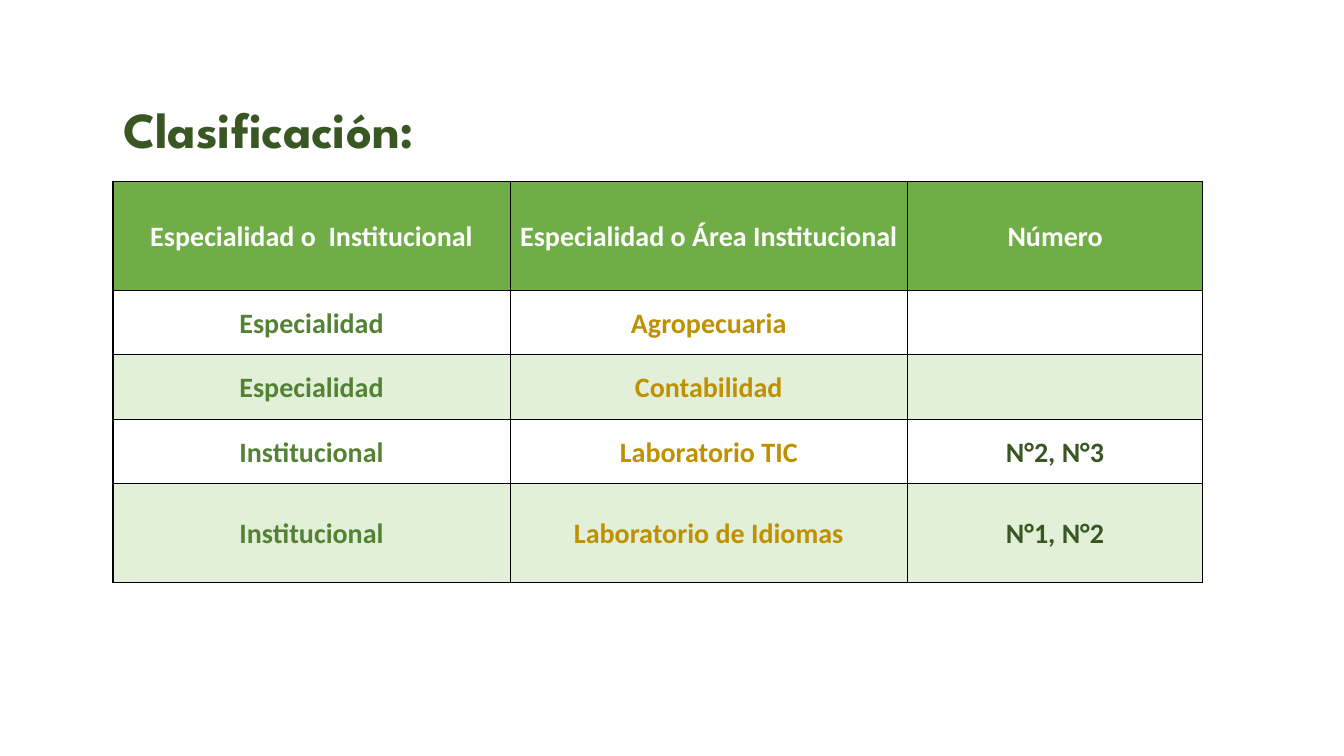
from dataclasses import dataclass

from pptx import Presentation
from pptx.dml.color import RGBColor
from pptx.enum.text import MSO_ANCHOR as Anchor, MSO_AUTO_SIZE as AutoSize, PP_ALIGN as Align
from pptx.oxml import parse_xml
from pptx.oxml.ns import nsdecls
from pptx.util import Emu, Pt

PX = 9144  # one px is a hundredth of an inch
COLORS = {
    "white": "FFFFFF",
    "black": "000000",
    "header": "70AD47",
    "band": "E2F0D9",
    "green": "548235",
    "gold": "BF9000",
    "dark": "385723",
}
TABLE_LEFT, TABLE_TOP = 112, 180
COLUMN_WIDTHS = (394, 394, 293)
COLUMN_COLORS = ("green", "gold", "dark")


@dataclass(frozen=True)
class TableRow:
    height: int
    texts: tuple[str, str, str]


HEADER = TableRow(108, ("Especialidad o  Institucional", "Especialidad o Área Institucional", "Número"))
BODY = (
    TableRow(64, ("Especialidad", "Agropecuaria", "")),
    TableRow(64, ("Especialidad", "Contabilidad", "")),
    TableRow(64, ("Institucional", "Laboratorio TIC", "N°2, N°3")),
    TableRow(98, ("Institucional", "Laboratorio de Idiomas", "N°1, N°2")),
)


def px(length: int) -> Emu:
    return Emu(length * PX)


def rgb(color: str) -> RGBColor:
    return RGBColor.from_string(COLORS[color])


def style_paragraph(para, font_name: str, size: int, color: str, align, spacing: float) -> None:
    para.alignment = align
    para.line_spacing = spacing
    para.font.name = font_name
    para.font.size = Pt(size)
    para.font.bold = True
    para.font.color.rgb = rgb(color)


def add_borders(cell) -> None:
    properties = cell._tc.get_or_add_tcPr()
    for index, side in enumerate(("lnL", "lnR", "lnT", "lnB")):
        border = parse_xml(
            f'<a:{side} {nsdecls("a")} w="{Pt(1)}"><a:solidFill>'
            f'<a:srgbClr val="{COLORS["black"]}"/></a:solidFill></a:{side}>'
        )
        properties.insert(index, border)


def fill_cell(cell, text: str, text_color: str, fill_color: str) -> None:
    cell.text = text
    cell.vertical_anchor = Anchor.MIDDLE
    cell.margin_left = cell.margin_right = px(7)
    cell.margin_top = cell.margin_bottom = 0
    cell.fill.solid()
    cell.fill.fore_color.rgb = rgb(fill_color)
    add_borders(cell)
    style_paragraph(cell.text_frame.paragraphs[0], "Calibri", 20, text_color, Align.CENTER, 1.07)


def set_title(page, text: str) -> None:
    title = page.shapes.title
    title.left, title.top, title.width, title.height = px(112), px(48), px(1148), px(115)
    frame = title.text_frame
    frame.text = text
    frame.word_wrap = True
    frame.auto_size = AutoSize.NONE
    frame.vertical_anchor = Anchor.BOTTOM
    style_paragraph(frame.paragraphs[0], "League Spartan", 36, "dark", Align.LEFT, 0.9)


def add_classification(page) -> None:
    rows = (HEADER, *BODY)
    table = page.shapes.add_table(
        len(rows), len(COLUMN_WIDTHS), px(TABLE_LEFT), px(TABLE_TOP),
        px(sum(COLUMN_WIDTHS)), px(sum(row.height for row in rows)),
    ).table
    table.first_row = table.horz_banding = False
    for column, width in zip(table.columns, COLUMN_WIDTHS):
        column.width = px(width)

    for row_index, row in enumerate(rows):
        table.rows[row_index].height = px(row.height)
        is_header = row is HEADER
        fill_color = "header" if is_header else ("band", "white")[row_index % 2]
        for column_index, text in enumerate(row.texts):
            text_color = "white" if is_header else COLUMN_COLORS[column_index]
            fill_cell(table.cell(row_index, column_index), text, text_color, fill_color)


def main() -> None:
    deck = Presentation()
    deck.slide_width, deck.slide_height = px(1333), px(750)
    page = deck.slides.add_slide(deck.slide_layouts.get_by_name("Title Only"))

    # Heading
    set_title(page, "Clasificación:")

    # Classification table
    add_classification(page)

    deck.save("out.pptx")


if __name__ == "__main__":
    main()
